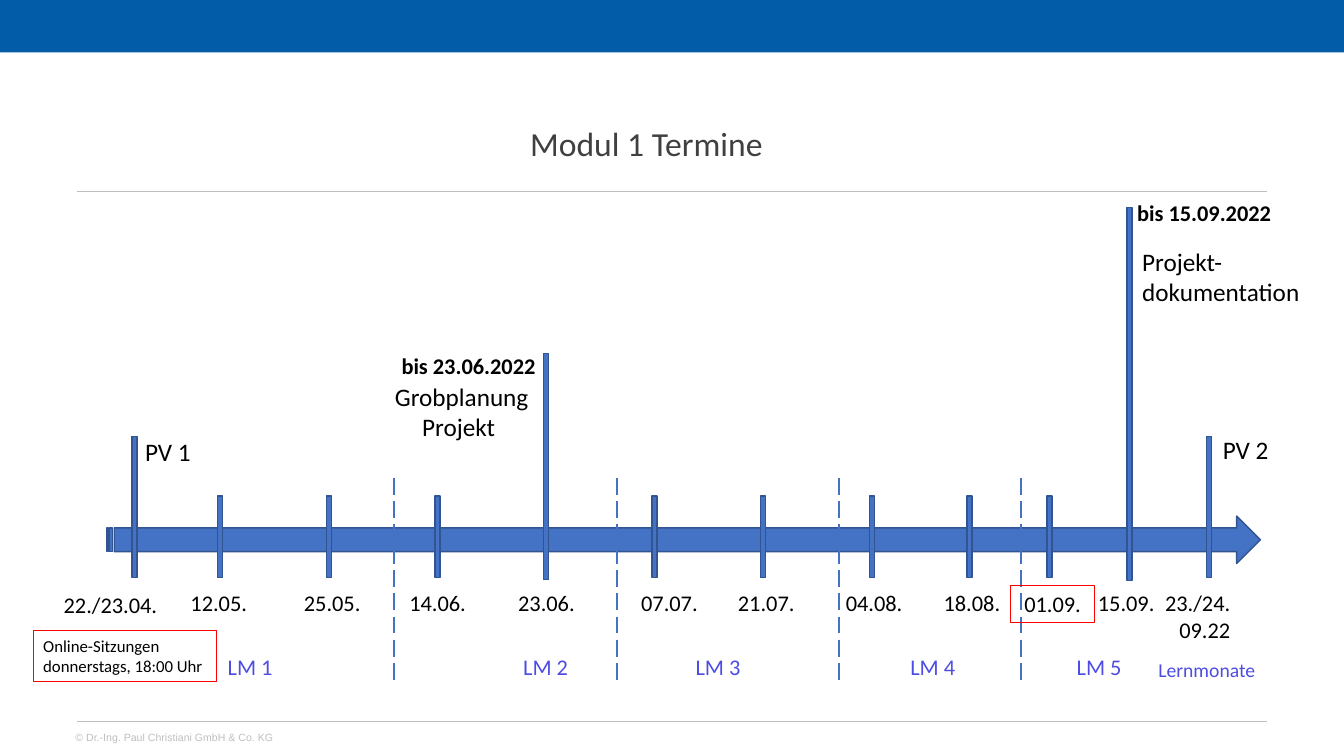
import pptx
import pptx.dml.color
import pptx.enum.dml
import pptx.enum.shapes
import pptx.enum.text
import pptx.oxml
import pptx.util

COLORS = {"header": "035CA8", "rule": "BFBFBF", "title": "404040", "text": "000000",
          "axis": "4472C4", "edge": "325491", "month": "4D4DE3", "alert": "FF0000"}
SHAPES = pptx.enum.shapes.MSO_SHAPE
ALIGN = pptx.enum.text.PP_ALIGN


def color(name):
    return pptx.dml.color.RGBColor.from_string(COLORS[name])


class TimelineSlide:
    """Draws on a grid whose columns and rows are a tenth of an inch."""
    cell = pptx.util.Inches(0.1)
    font = "Calibri"

    def __init__(self, deck):
        self.slide = deck.slides.add_slide(deck.slide_layouts[6])

    def grid(self, *cells):
        return [round(count * self.cell) for count in cells]

    def outline(self, line, name, width):
        line.color.rgb = color(name)
        line.width = pptx.util.Pt(width)

    def block(self, kind, box, fill, edge=None):
        shape = self.slide.shapes.add_shape(kind, *self.grid(*box))
        shape.shadow.inherit = False
        shape.fill.solid()
        shape.fill.fore_color.rgb = color(fill)
        if edge:
            self.outline(shape.line, edge, 1)
        else:
            shape.line.fill.background()

    def rule(self, start, end, name, width, dash=None):
        line = self.slide.shapes.add_connector(
            pptx.enum.shapes.MSO_CONNECTOR.STRAIGHT, *self.grid(*start, *end))
        line._element.spPr.append(pptx.oxml.parse_xml(
            '<a:effectLst xmlns:a="http://schemas.openxmlformats.org/drawingml/2006/main"/>'))
        self.outline(line.line, name, width)
        if dash:
            line.line.dash_style = dash

    def text(self, box, lines, size, ink="text", align=ALIGN.LEFT, wrap=True,
             frame=None, indents=(), **extra):
        label = self.slide.shapes.add_textbox(*self.grid(*box))
        if frame:
            self.outline(label.line, frame, 0.75)
        body = label.text_frame
        body.word_wrap = wrap
        body.auto_size = pptx.enum.text.MSO_AUTO_SIZE.SHAPE_TO_FIT_TEXT
        body.text = lines
        for paragraph, indent in zip(body.paragraphs, indents):
            paragraph._p.get_or_add_pPr().set("marR", str(self.grid(indent)[0]))
        style = {"name": self.font, "size": pptx.util.Pt(size), **extra}
        for paragraph in body.paragraphs:
            paragraph.alignment = align
            for run in paragraph.runs:
                run.font.color.rgb = color(ink)
                for attribute, value in style.items():
                    setattr(run.font, attribute, value)

    def tick(self, left, top, height):
        self.block(SHAPES.RECTANGLE, (left, top, 0.5, height), "axis", "edge")

    def date(self, label, center, top=58, width=8.4, frame=None):
        self.text((center - width / 2, top, width, 3.7), label, 16,
                  align=ALIGN.CENTER, frame=frame)


def main():
    deck = pptx.Presentation()
    deck.slide_width = pptx.util.Inches(13.33)
    deck.slide_height = pptx.util.Inches(7.5)
    plan = TimelineSlide(deck)

    # Page frame and title
    for height in (19, 71.6):
        plan.rule((7.6, height), (125.7, height), "rule", 0.75)
    plan.block(SHAPES.RECTANGLE, (0, 0, 133.3, 5.2), "header")
    plan.text((6.5, 72, 66.7, 2.3), "© Dr.-Ing. Paul Christiani GmbH & Co. KG", 7.5,
              "rule", name="Arial")
    plan.text((51.6, 11.7, 25.3, 5), "Modul 1 Termine", 24, "title", wrap=False)

    # Time axis and month borders
    plan.block(SHAPES.STRIPED_RIGHT_ARROW, (10.6, 51.2, 114.4, 4.7), "axis", "edge")
    for border in (39.1, 61.2, 83.2, 101.3):
        plan.rule((border, 47.4), (border, 67.9), "axis", 1.5,
                  pptx.enum.dml.MSO_LINE.LONG_DASH)

    # Ticks: opening event, seven even dates, then four closer ones
    spring = [21.6 + 10.77 * step for step in range(7)]
    autumn = [95.9 + 7.93 * step for step in range(4)]
    outline_due, report_due, closing = spring[3], autumn[2], autumn[3]
    tall = {13.1: (43.3, 14), outline_due: (35.1, 22.4),
            report_due: (20.6, 37), closing: (43.3, 14)}
    for left in [13.1] + spring + autumn:
        plan.tick(left, *tall.get(left, (49.2, 8.1)))

    # Dates below the axis
    plan.date("22./23.04.", 10.95, 58.2, 12.9)
    for label, center in (("12.05.", 21.7), ("25.05.", 32.95), ("14.06.", 43.4),
                          ("23.06.", 54.2), ("07.07.", 66.4), ("21.07.", 76),
                          ("04.08.", 86.7), ("18.08.", 96.4), ("15.09.", 111.7)):
        plan.date(label, center)
    plan.date("01.09.", 104.4, 58.1, frame="alert")
    plan.text((112.9, 58, 10.1, 6.4), "23./24.\v09.22", 16, align=ALIGN.RIGHT)

    # Milestones above the axis
    plan.text((13.4, 42.8, 7.5, 4), "PV 1", 18)
    plan.text((120.3, 42.6, 7.8, 4), "PV 2", 18)
    plan.text((32.7, 37.3, 20.7, 7.1), "Grobplanung\nProjekt", 18,
              align=ALIGN.RIGHT, indents=(0, 3.3))
    plan.text((36.7, 34.4, 17.4, 3.7), "bis 23.06.2022", 16, align=ALIGN.RIGHT, bold=True)
    plan.text((112.3, 23.9, 18.1, 7.1), "Projekt-\vdokumentation", 18)
    plan.text((111.8, 19.3, 18.1, 3.7), "bis 15.09.2022", 16, bold=True)

    # Learning months and session note
    for month, left in enumerate((21.6, 50.9, 68, 89.3, 105.8), 1):
        plan.text((left, 64.3, 6.5, 3.7), f"LM {month}", 16, "month", wrap=False)
    plan.text((113.9, 64.8, 12.9, 3.4), "Lernmonate", 14, "month")
    plan.text((3.3, 62.6, 18.2, 5), "Online-Sitzungen\ndonnerstags, 18:00 Uhr", 12,
              wrap=False, frame="alert")

    deck.save("out.pptx")


if __name__ == "__main__":
    main()
